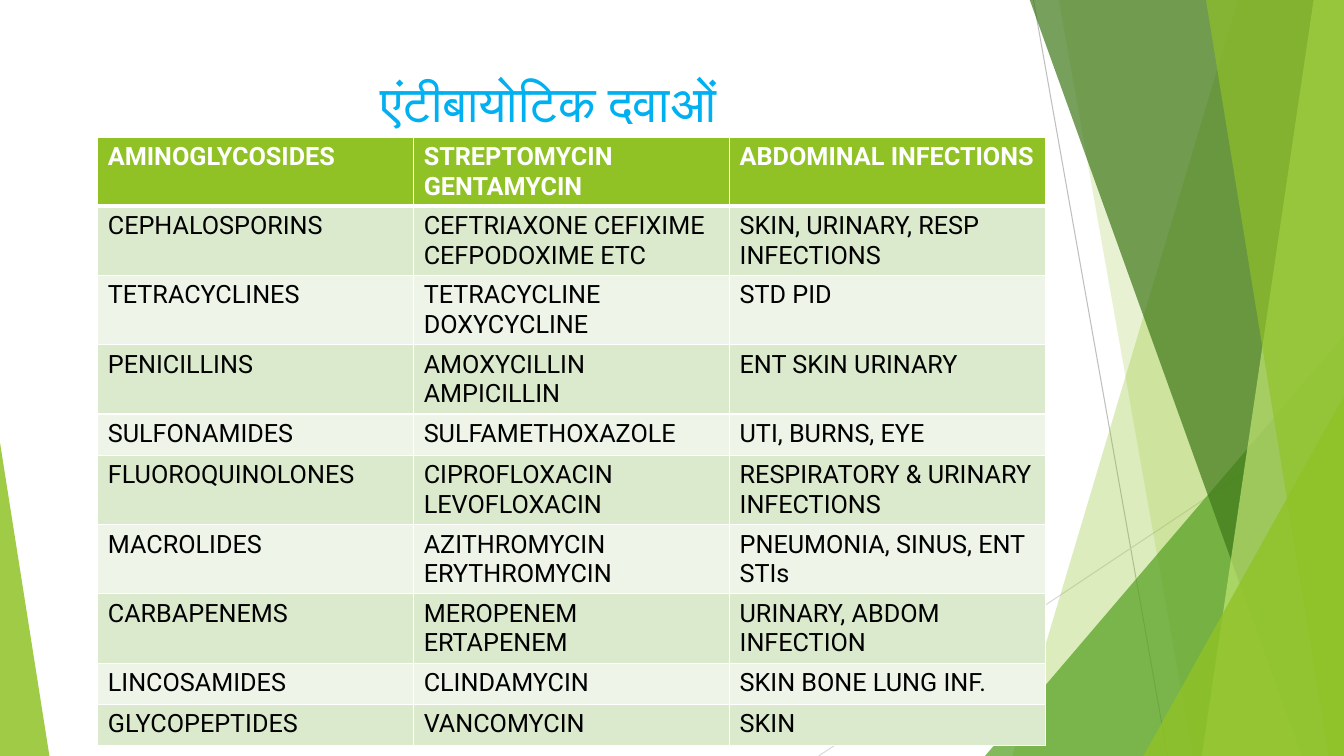
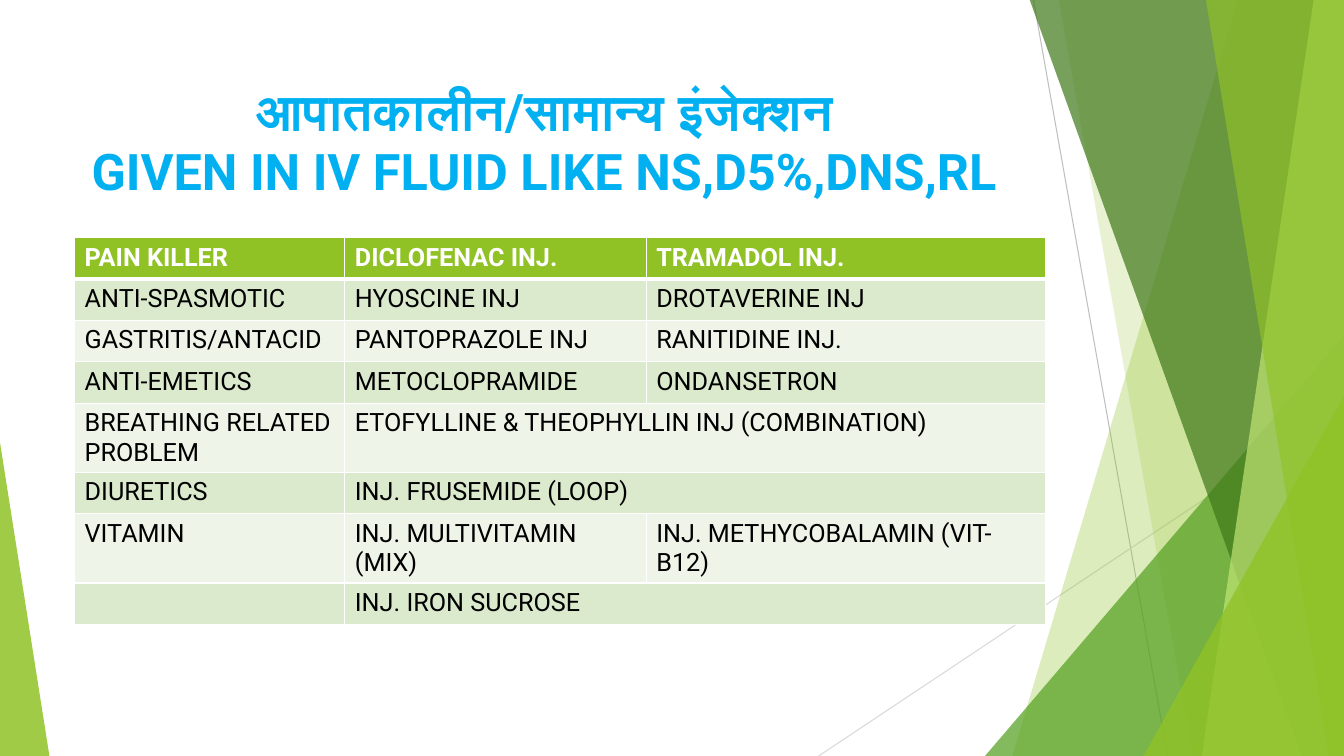
from dataclasses import dataclass
from lxml import etree
from pptx import Presentation
from pptx.dml import color
from pptx.enum import shapes, text
from pptx.oxml import ns
from pptx.util import Inches, Pt


@dataclass(frozen=True)
class Theme:
    lime: str = "90C226"
    pale: str = "C0E474"
    leaf: str = "54A021"
    moss: str = "3F7819"
    sky: str = "00B0F0"
    white: str = "FFFFFF"
    black: str = "000000"
    odd: str = "DBE9CD"
    even: str = "EEF4E8"
    gray: str = "BFBFBF"
    mist: str = "D9D9D9"
    face: str = "Roboto"
    head: float = 36
    body: float = 18
    hair: float = 0.75
    thin: float = 1
    thick: float = 3


T = Theme()
W, H = 13.33, 7.5
rgb = color.RGBColor.from_string


def write(frame, words, size=T.body, face=T.face, ink=T.black, bold=False,
          align=text.PP_ALIGN.LEFT):
    for i, line in enumerate(words.split("\n")):
        para = frame.paragraphs[0] if i == 0 else frame.add_paragraph()
        para.alignment = align
        run = para.add_run()
        run.text = line
        run.font.size = Pt(size)
        run.font.name = face
        run.font.bold = bold
        run.font.color.rgb = rgb(ink)


def edge(cell, side, width):
    props = cell._tc.get_or_add_tcPr()
    line = etree.SubElement(props, ns.qn("a:" + side), w=str(Pt(width)))
    fill = etree.SubElement(line, ns.qn("a:solidFill"))
    etree.SubElement(fill, ns.qn("a:srgbClr"), val=T.white)


deck = Presentation()
deck.slide_width, deck.slide_height = Inches(W), Inches(H)
base = deck.slide_layouts[5]

pages = [
    dict(
        title="एंटीबायोटिक दवाओं", face="Montserrat", bold=False,
        box=(0.74, 0.67, 9.4, 1.24), spot=(0.97, 1.36), cols=[9.4 / 3] * 3,
        rows=[
            ("AMINOGLYCOSIDES", "STREPTOMYCIN GENTAMYCIN", "ABDOMINAL INFECTIONS"),
            ("CEPHALOSPORINS", "CEFTRIAXONE CEFIXIME CEFPODOXIME ETC",
             "SKIN, URINARY, RESP INFECTIONS"),
            ("TETRACYCLINES", "TETRACYCLINE DOXYCYCLINE", "STD PID"),
            ("PENICILLINS", "AMOXYCILLIN AMPICILLIN", "ENT SKIN URINARY"),
            ("SULFONAMIDES", "SULFAMETHOXAZOLE", "UTI, BURNS, EYE"),
            ("FLUOROQUINOLONES", "CIPROFLOXACIN LEVOFLOXACIN",
             "RESPIRATORY & URINARY INFECTIONS"),
            ("MACROLIDES", "AZITHROMYCIN ERYTHROMYCIN", "PNEUMONIA, SINUS, ENT STIs"),
            ("CARBAPENEMS", "MEROPENEM ERTAPENEM", "URINARY, ABDOM INFECTION"),
            ("LINCOSAMIDES", "CLINDAMYCIN", "SKIN BONE LUNG INF."),
            ("GLYCOPEPTIDES", "VANCOMYCIN", "SKIN"),
        ],
    ),
    dict(
        title="आपातकालीन/सामान्य इंजेक्शन\nGIVEN IN IV FLUID LIKE NS,D5%,DNS,RL",
        face=T.face, bold=True,
        box=(0.7, 0.74, 9.4, 1.44), spot=(0.74, 2.36), cols=[2.68, 2.99, 3.96],
        rows=[
            ("PAIN KILLER", "DICLOFENAC INJ.", "TRAMADOL INJ."),
            ("ANTI-SPASMOTIC", "HYOSCINE INJ", "DROTAVERINE INJ"),
            ("GASTRITIS/ANTACID", "PANTOPRAZOLE INJ", "RANITIDINE INJ."),
            ("ANTI-EMETICS", "METOCLOPRAMIDE", "ONDANSETRON"),
            ("BREATHING RELATED PROBLEM", "ETOFYLLINE & THEOPHYLLIN INJ (COMBINATION)"),
            ("DIURETICS", "INJ. FRUSEMIDE (LOOP)"),
            ("VITAMIN", "INJ. MULTIVITAMIN (MIX)", "INJ. METHYCOBALAMIN (VIT-B12)"),
            ("", "INJ. IRON SUCROSE"),
        ],
    ),
]

for page in pages:
    slide = deck.slides.add_slide(base)
    title = slide.shapes.title
    title.left, title.top, title.width, title.height = map(Inches, page["box"])
    frame = title.text_frame
    frame.word_wrap = True
    frame.auto_size = text.MSO_AUTO_SIZE.NONE
    frame.vertical_anchor = text.MSO_ANCHOR.TOP
    write(frame, page["title"], size=T.head, face=page["face"], ink=T.sky,
          bold=page["bold"], align=text.PP_ALIGN.CENTER)

    rows, cols = page["rows"], page["cols"]
    left, top = page["spot"]
    table = slide.shapes.add_table(
        len(rows), len(cols), Inches(left), Inches(top),
        Inches(sum(cols)), Inches(0.41 * len(rows))).table
    for col, width in zip(table.columns, cols):
        col.width = Inches(width)
    for r, row in enumerate(rows):
        first = r == 0
        for c in range(len(cols)):
            cell = table.cell(r, c)
            edge(cell, "lnL", T.thin)
            edge(cell, "lnR", T.thin)
            edge(cell, "lnT", T.thick if r == 1 else T.thin)
            edge(cell, "lnB", T.thick if first else T.thin)
            cell.fill.solid()
            cell.fill.fore_color.rgb = rgb(
                T.lime if first else T.odd if r % 2 else T.even)
            if c < len(row) and row[c]:
                write(cell.text_frame, row[c], bold=first,
                      ink=T.white if first else T.black)
        if len(row) < len(cols):
            table.cell(r, len(row) - 1).merge(table.cell(r, len(cols) - 1))

draw = deck.slides[0].shapes
art = []
for x1, y1, x2, y2, ink in [(10.25, 0, 11.58, H, T.gray), (W, 4.03, 8.12, H, T.mist)]:
    line = draw.add_connector(shapes.MSO_CONNECTOR.STRAIGHT, *map(Inches, (x1, y1, x2, y2)))
    line.line.color.rgb = rgb(ink)
    line.line.width = Pt(T.hair)
    etree.SubElement(line._element.spPr, ns.qn("a:effectLst"))
    art.append(line)

facets = [
    ("band", (12.28, 10.04), T.lime, 30),
    ("band", (10.5, 11.83), T.lime, 20),
    ("wedge", (9.77, 3.33, 3.56, 1), T.leaf, 72),
    ("band", (10.21, 12.91), T.moss, 70),
    ("band", (13.03, 11.92), T.pale, 70),
    ("band", (11.96, 13.18), T.lime, 65),
    ("wedge", (11.34, 3.93, 1.99, 1), T.lime, 80),
    ("wedge", (0, 4.39, 0.49, 0), T.lime, 85),
]
for kind, dims, ink, alpha in facets:
    if kind == "band":
        high, low = dims
        pen = draw.build_freeform(Inches(high), Inches(-0.01))
        pen.add_line_segments(
            [(Inches(x), Inches(y)) for x, y in [(W, -0.01), (W, H), (low, H)]], close=True)
        part = pen.convert_to_shape()
    else:
        left, top, width, peak = dims
        part = draw.add_shape(shapes.MSO_SHAPE.ISOSCELES_TRIANGLE,
                              *map(Inches, (left, top, width, H - top)))
        part.adjustments[0] = peak
    part.shadow.inherit = False
    part.line.fill.background()
    part.fill.solid()
    part.fill.fore_color.rgb = rgb(ink)
    tint = part._element.spPr.find(".//" + ns.qn("a:srgbClr"))
    etree.SubElement(tint, ns.qn("a:alpha"), val=str(alpha * 1000))
    art.append(part)

for i, part in enumerate(art, 100):
    part._element.find(".//" + ns.qn("p:cNvPr")).set("id", str(i))
    base.shapes._spTree.append(part._element)

deck.save("out.pptx")
